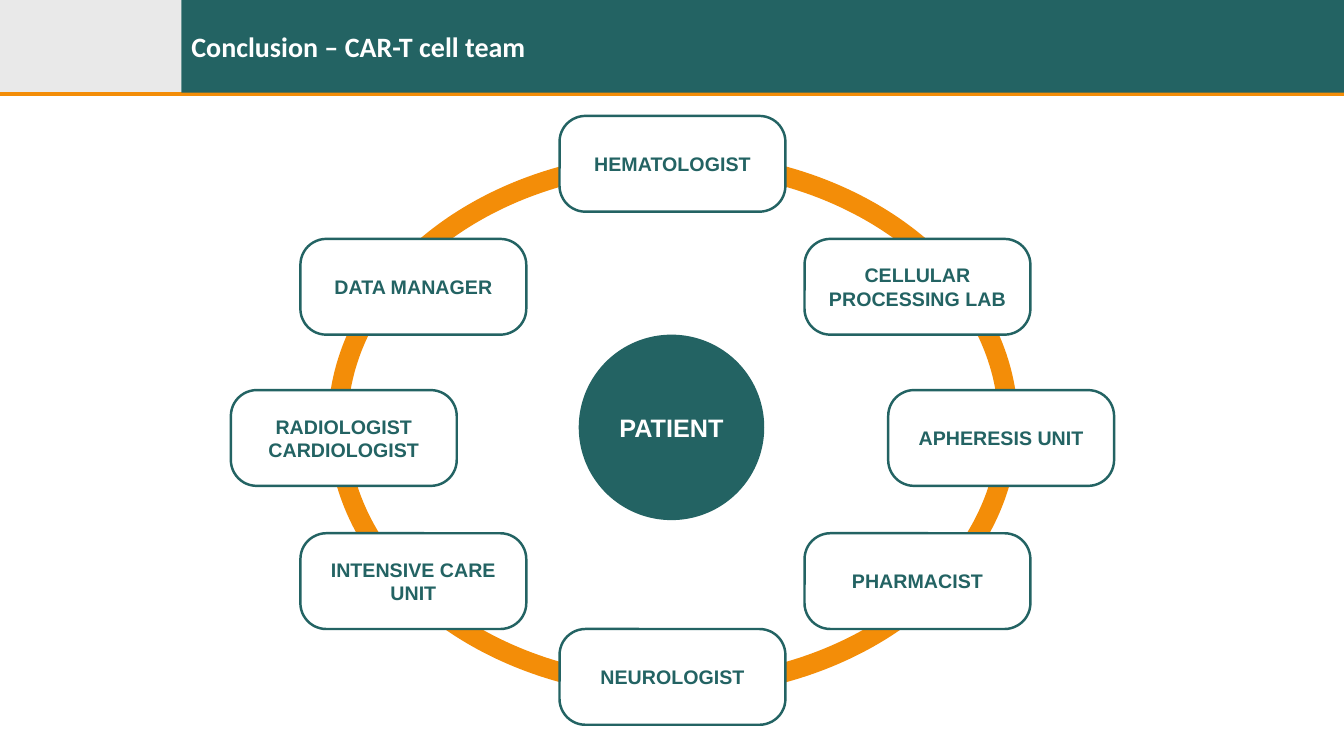
from lxml import etree
from pptx import Presentation
from pptx import util as u
from pptx.dml.color import RGBColor
from pptx.enum import shapes, text
from pptx.oxml import ns

TEAL = RGBColor(0x23, 0x63, 0x63)
ORANGE = RGBColor(0xF3, 0x8D, 0x08)
GREY = RGBColor(0xE9, 0xE9, 0xE9)
WHITE = RGBColor(0xFF, 0xFF, 0xFF)

SLIDE_W, SLIDE_H = 13.33, 7.5
HEADER_H, HEADER_X = 0.92, 1.8
BOX_W, BOX_H = 2.24, 0.95

# Left edges of the columns and top edges of the rows of team boxes
COLS = [2.29, 2.98, 5.55, 7.98, 8.81]
ROWS = [1.15, 2.37, 3.87, 5.29, 6.24]

# Column, row, paragraphs, side inset
TEAM = [
    (2, 0, ["HEMATOLOGIST"], 0.1),
    (3, 1, ["CELLULAR PROCESSING LAB"], 0),
    (4, 2, ["APHERESIS UNIT"], 0.1),
    (3, 3, ["PHARMACIST"], 0.1),
    (2, 4, ["NEUROLOGIST"], 0.1),
    (1, 1, ["DATA MANAGER"], 0.1),
    (0, 2, ["RADIOLOGIST", "CARDIOLOGIST"], 0.1),
    (1, 3, ["INTENSIVE CARE", "UNIT"], 0.1),
]


def add_shape(slide, kind, x, y, w, h, fill=None, line=None, weight=1):
    sp = slide.shapes.add_shape(kind, *map(u.Inches, (x, y, w, h)))
    sp.shadow.inherit = False
    if fill is None:
        sp.fill.background()
    else:
        sp.fill.solid()
        sp.fill.fore_color.rgb = fill
    if line is None:
        sp.line.fill.background()
    else:
        sp.line.color.rgb = line
        sp.line.width = u.Pt(weight)
    return sp


def write(sp, lines, size, color, font="Arial", align=text.PP_ALIGN.CENTER, inset=0.1):
    """Fill a shape with bold, vertically centred paragraphs."""
    tf = sp.text_frame
    tf.word_wrap = True
    tf.vertical_anchor = text.MSO_ANCHOR.MIDDLE
    tf.margin_left = tf.margin_right = u.Inches(inset)
    for i, line in enumerate(lines):
        p = tf.add_paragraph() if i else tf.paragraphs[0]
        p.alignment = align
        r = p.add_run()
        r.text = line
        r.font.name = font
        r.font.size = u.Pt(size)
        r.font.bold = True
        r.font.color.rgb = color


def add_rule(slide, y, color, weight):
    """Draw a line across the whole slide."""
    rule = slide.shapes.add_connector(
        shapes.MSO_CONNECTOR.STRAIGHT, 0, u.Inches(y), u.Inches(SLIDE_W), u.Inches(y))
    rule.line.color.rgb = color
    rule.line.width = u.Pt(weight)
    etree.SubElement(rule._element.spPr, ns.qn("a:effectLst"))


def add_header(slide, title):
    rect = shapes.MSO_SHAPE.RECTANGLE
    band_w = SLIDE_W - HEADER_X
    add_shape(slide, rect, 0, 0, HEADER_X, HEADER_H, GREY)
    add_rule(slide, HEADER_H + 0.01, ORANGE, 3)
    add_shape(slide, rect, HEADER_X, 0, band_w, HEADER_H, TEAL)
    box = slide.shapes.add_textbox(*map(u.Inches, (HEADER_X, 0, band_w, HEADER_H)))
    write(box, [title], 20, WHITE, "Calibri", text.PP_ALIGN.LEFT)


def add_team_box(slide, col, row, lines, inset):
    sp = add_shape(slide, shapes.MSO_SHAPE.ROUNDED_RECTANGLE,
                   COLS[col], ROWS[row], BOX_W, BOX_H, WHITE, TEAL, 1.75)
    sp.adjustments[0] = 0.27
    write(sp, lines, 14, TEAL, inset=inset)


def main():
    prs = Presentation()
    prs.slide_width, prs.slide_height = u.Inches(SLIDE_W), u.Inches(SLIDE_H)
    slide = prs.slides.add_slide(prs.slide_layouts[6])

    add_header(slide, "Conclusion – CAR-T cell team")
    oval = shapes.MSO_SHAPE.OVAL
    add_shape(slide, oval, 3.35, 1.6, 6.65, 5.22, line=ORANGE, weight=14)
    for member in TEAM:
        add_team_box(slide, *member)
    patient = add_shape(slide, oval, 5.74, 3.32, 1.84, 1.84, TEAL)
    write(patient, ["PATIENT"], 18, WHITE)

    prs.save("out.pptx")


if __name__ == "__main__":
    main()
